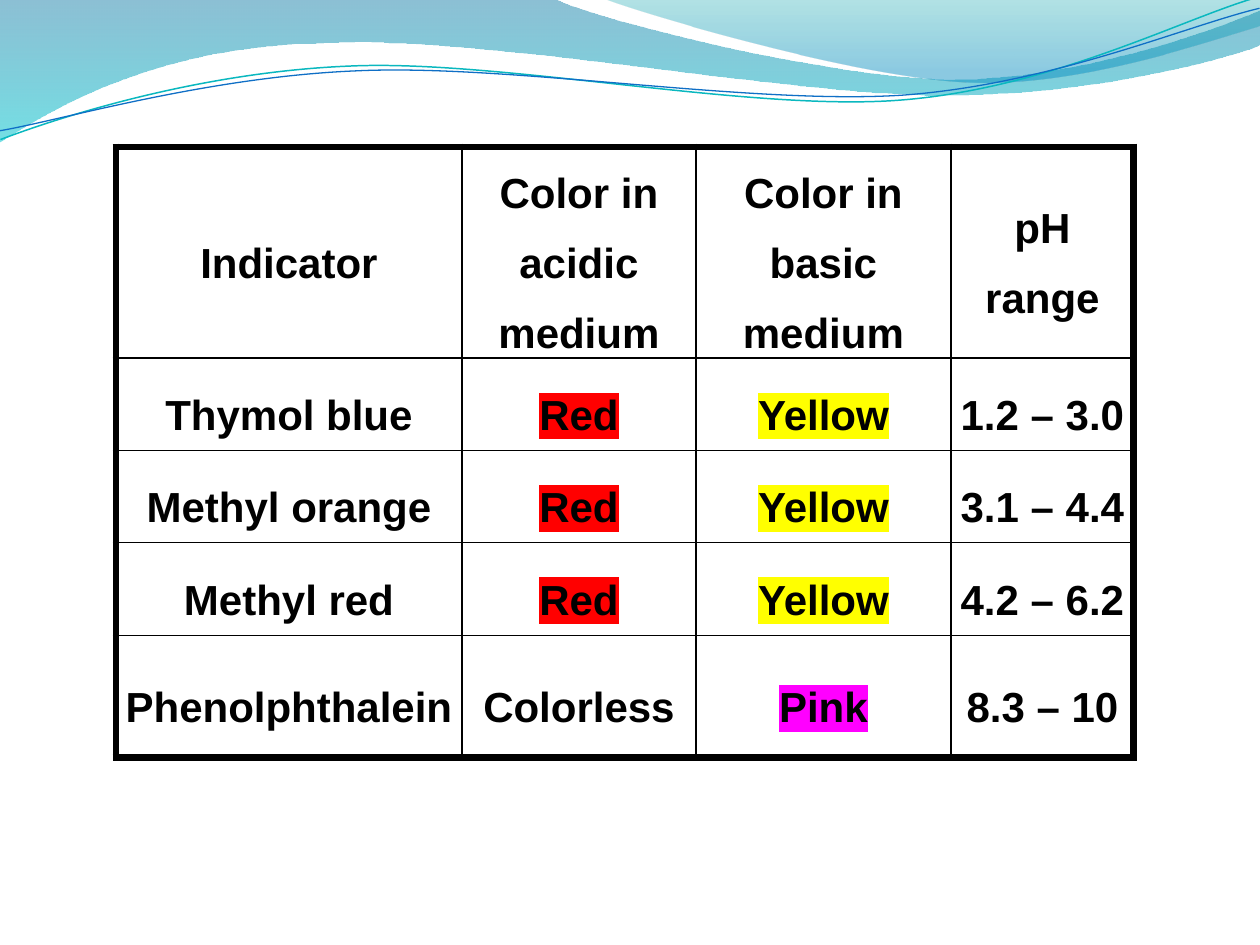
import dataclasses

import pptx
import pptx.dml.color
import pptx.enum.text
import pptx.oxml
import pptx.oxml.ns
import pptx.util

EMU_PER_PX = 914400 / 126


@dataclasses.dataclass(frozen=True)
class Theme:
    font: str = "Arial"
    size: int = 24
    ink: str = "000000"
    red: str = "FF0000"
    yellow: str = "FFFF00"
    pink: str = "FF00FF"
    # Gradient stops: position, colour, opacity in percent
    main_wave: tuple = ((0, "0074A1", 45), (100, "00C6CF", 55))
    right_wave: tuple = ((0, "00A1A9", 30), (80, "008BBF", 45))
    teal_line: str = "0AB8BF"
    blue_line: str = "0F6FC6"
    line_tilt: float = 357.3
    outer_border: float = 4.5
    header_border: float = 1.5
    inner_border: float = 1


def px(n):
    return round(n * EMU_PER_PX)


def rgb(color):
    return pptx.dml.color.RGBColor.from_string(color)


def qn(tag):
    return pptx.oxml.ns.qn(tag)


def element(tag, attributes="", content=""):
    return pptx.oxml.parse_xml(
        f"<a:{tag} {pptx.oxml.ns.nsdecls('a')} {attributes}>{content}</a:{tag}>")


class SlideBuilder:
    """Holds the theme and the slide being drawn."""

    def __init__(self, slide, theme):
        self.slide = slide
        self.theme = theme

    def outline(self, start, segments, close):
        """Draw line ends (2 numbers) and cubic curves (6 numbers) as one outline."""
        points = [(px(seg[i]), px(seg[i + 1]))
                  for seg in segments for i in range(0, len(seg), 2)]
        builder = self.slide.shapes.build_freeform(px(start[0]), px(start[1]))
        builder.add_line_segments(points, close=close)
        sp = builder.convert_to_shape()
        sp.shadow.inherit = False

        steps = iter(list(sp._element.iter(qn("a:lnTo"))))
        for seg in segments:
            step = next(steps)
            if len(seg) == 6:
                curve = element("cubicBezTo")
                step.addprevious(curve)
                for control in (step, next(steps), next(steps)):
                    curve.append(control[0])
                    control.getparent().remove(control)
        return sp

    def wave(self, start, segments, stops):
        sp = self.outline(start, segments, close=True)
        sp.line.fill.background()
        sp.fill.gradient()
        sp.fill.gradient_angle = 270
        for stop, (position, color, opacity) in zip(sp.fill.gradient_stops, stops):
            stop.position = position / 100
            stop.color.rgb = rgb(color)
            clr = stop._gs.find(qn("a:srgbClr"))
            clr.append(element("alpha", f'val="{opacity * 1000}"'))

    def curve(self, start, segments, color, width):
        sp = self.outline(start, segments, close=False)
        sp.rotation = self.theme.line_tilt
        sp.fill.background()
        sp.line.color.rgb = rgb(color)
        sp.line.width = pptx.util.Pt(width)

    def border(self, cell, side, width):
        cell._tc.get_or_add_tcPr().append(element(
            f"ln{side}", f'w="{pptx.util.Pt(width)}"',
            f'<a:solidFill><a:srgbClr val="{self.theme.ink}"/></a:solidFill>'))

    def cell(self, cell, text, highlight):
        cell.vertical_anchor = pptx.enum.text.MSO_ANCHOR.MIDDLE
        cell.margin_left = cell.margin_right = px(9)
        cell.margin_top = cell.margin_bottom = 0
        cell.text_frame.text = text
        p = cell.text_frame.paragraphs[0]
        p.alignment = pptx.enum.text.PP_ALIGN.CENTER
        p.line_spacing = 1.5
        r = p.runs[0]
        r.font.size = pptx.util.Pt(self.theme.size)
        r.font.bold = True
        r.font.name = self.theme.font
        r.font.color.rgb = rgb(self.theme.ink)
        if highlight:
            fill = r.font._element.find(qn("a:solidFill"))
            fill.addnext(element(
                "highlight", content=f'<a:srgbClr val="{highlight}"/>'))

    def table(self, left, top, height, widths, heights, rows, highlights):
        frame = self.slide.shapes.add_table(
            len(heights), len(widths), px(left), px(top),
            px(sum(widths)), px(height))
        table = frame.table
        table.first_row = table.horz_banding = False
        for column, width in zip(table.columns, widths):
            column.width = px(width)
        for row, row_height in zip(table.rows, heights):
            row.height = px(row_height)
        frame.height = px(height)

        th = self.theme
        inner = th.inner_border
        row_lines = [th.outer_border, th.header_border,
                     *[inner] * (len(heights) - 2), th.outer_border]
        col_lines = [th.outer_border, *[inner] * (len(widths) - 1), th.outer_border]
        for i, row in enumerate(rows):
            for j, text in enumerate(row):
                cell = table.cell(i, j)
                self.cell(cell, text, highlights.get(text))
                for side, width in (("L", col_lines[j]), ("R", col_lines[j + 1]),
                                    ("T", row_lines[i]), ("B", row_lines[i + 1])):
                    self.border(cell, side, width)
                cell.fill.background()


def main():
    prs = pptx.Presentation()
    prs.slide_width = px(1260)
    prs.slide_height = px(945)
    theme = Theme()
    s = SlideBuilder(prs.slides.add_slide(prs.slide_layouts[6]), theme)

    s.wave((0, 0), [
        (554, -1),
        (600, 21, 837, 79, 955, 79),
        (1075, 79, 1207, 33, 1260, 11),
        (1261, 45),
        (1239, 55, 1096, 96, 940, 95),
        (784, 95, 481, 35, 324, 43),
        (163, 45, 58, 105, -1, 142),
        (0, 0),
    ], theme.main_wave)
    s.wave((604, -1), [
        (641, 14, 859, 78, 969, 82),
        (1079, 87, 1211, 40, 1260, 26),
        (1260, 0),
        (604, -1),
    ], theme.right_wave)
    s.curve((-2, 110), [
        (59, 90, 200, 52, 350, 53),
        (499, 53, 745, 117, 896, 113),
        (1049, 109, 1184, 45, 1260, 27),
    ], theme.teal_line, 0.85)
    s.curve((-2, 101), [
        (57, 94, 207, 57, 357, 58),
        (509, 58, 750, 111, 902, 108),
        (1052, 104, 1188, 52, 1262, 38),
    ], theme.blue_line, 0.75)

    s.table(116, 147, 626, [346, 234, 255, 183], [188, 93, 92, 93, 122], [
        ("Indicator", "Color in acidic medium", "Color in basic medium", "pH range"),
        ("Thymol blue", "Red", "Yellow", "1.2 – 3.0"),
        ("Methyl orange", "Red", "Yellow", "3.1 – 4.4"),
        ("Methyl red", "Red", "Yellow", "4.2 – 6.2"),
        ("Phenolphthalein", "Colorless", "Pink", "8.3 – 10"),
    ], {"Red": theme.red, "Yellow": theme.yellow, "Pink": theme.pink})

    prs.save("out.pptx")


if __name__ == "__main__":
    main()
